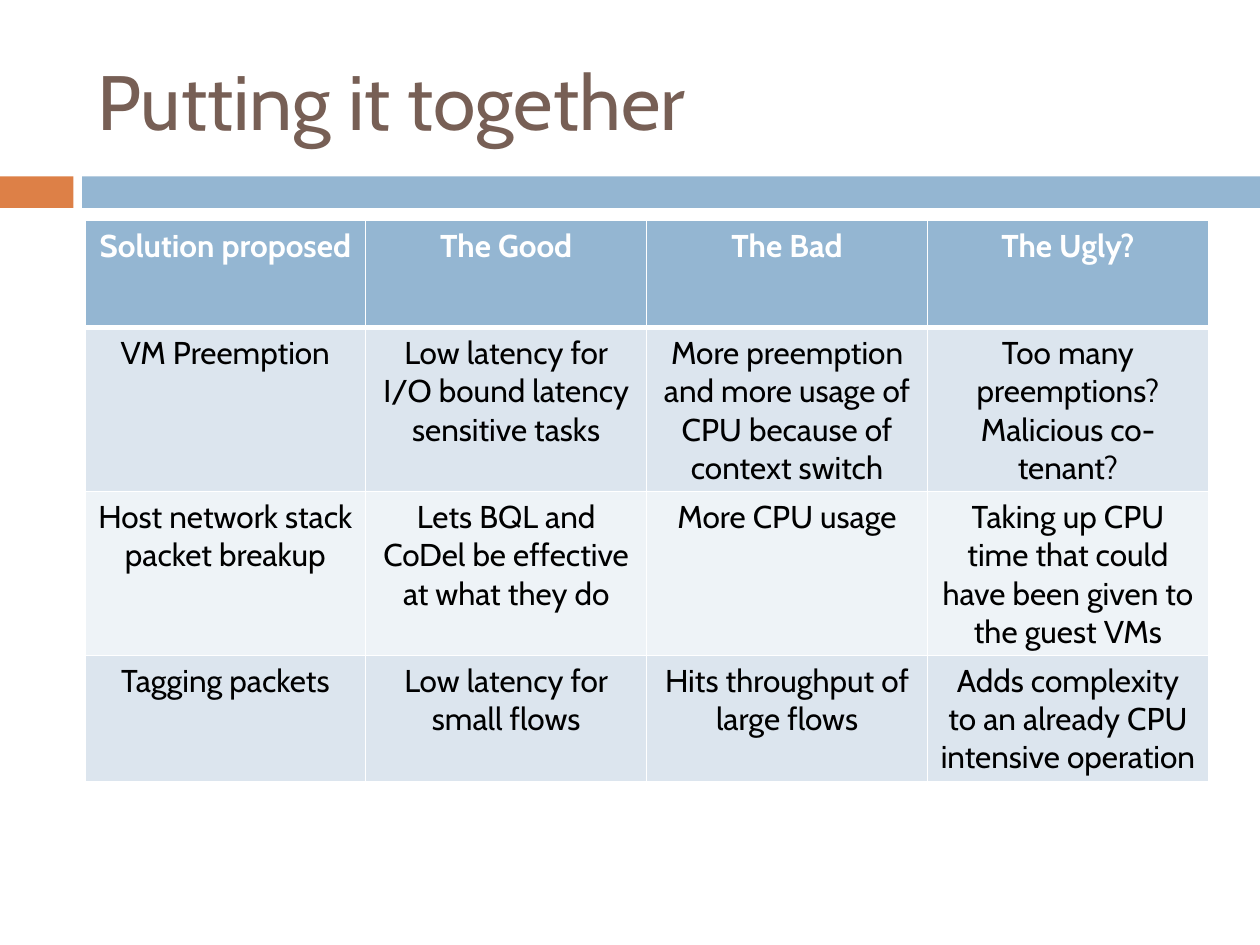
from lxml.etree import SubElement
from pptx import Presentation
from pptx.dml.color import RGBColor
from pptx.enum.shapes import MSO_SHAPE
from pptx.enum.text import MSO_ANCHOR, PP_ALIGN
from pptx.oxml.ns import qn
from pptx.util import Pt

HUES = {"rust": "DD8047", "blue": "94B6D2", "brown": "775F55", "white": "FFFFFF",
        "black": "000000", "pale": "DCE5EE", "light": "EEF3F7"}
ROWS = [
    ["Solution proposed", "The Good", "The Bad", "The Ugly?"],
    ["VM Preemption", "Low latency for I/O bound latency sensitive tasks",
     "More preemption and more usage of CPU because of context switch",
     "Too many preemptions? Malicious co-tenant?"],
    ["Host network stack packet breakup",
     "Lets BQL and CoDel be effective at what they do", "More CPU usage",
     "Taking up CPU time that could have been given to the guest VMs"],
    ["Tagging packets", "Low latency for small flows",
     "Hits throughput of large flows",
     "Adds complexity to an already CPU intensive operation"],
]


def color(name):
    """Return the named colour."""
    return RGBColor.from_string(HUES[name])


def write(frame, text, size=18, hue="black", bold=False, align=PP_ALIGN.LEFT):
    """Put formatted text in a text frame."""
    frame.word_wrap = True
    para = frame.paragraphs[0]
    para.alignment = align
    run = para.add_run()
    run.text = text
    font = run.font
    font.name, font.size, font.bold = "Cabin", Pt(size), bold
    font.color.rgb = color(hue)


def add_title(slide, text, left, top, width, height):
    """Add the slide title in the given box."""
    box = slide.shapes.add_textbox(Pt(left), Pt(top), Pt(width), Pt(height))
    box.text_frame.vertical_anchor = MSO_ANCHOR.MIDDLE
    write(box.text_frame, text, size=44, hue="brown")


def add_band(slide, left, top, width, height, tab=42, gap=5):
    """Add a short tab and a long bar that fill the given box."""
    bars = [(left, tab, "rust"), (left + tab + gap, width - tab - gap, "blue")]
    for start, span, hue in bars:
        bar = slide.shapes.add_shape(MSO_SHAPE.RECTANGLE, Pt(start), Pt(top),
                                     Pt(span), Pt(height))
        bar.shadow.inherit = False
        bar.fill.solid()
        bar.fill.fore_color.rgb = color(hue)
        bar.line.fill.background()


def add_edges(cell, top, base):
    """Draw white borders around a cell."""
    props = cell._tc.get_or_add_tcPr()
    for side, width in zip("LRTB", (1, 1, top, base)):
        line = SubElement(props, qn(f"a:ln{side}"), w=str(Pt(width)))
        fill = SubElement(line, qn("a:solidFill"))
        SubElement(fill, qn("a:srgbClr"), val=HUES["white"])


def add_grid(slide, rows, left, top, width, height):
    """Add the table with a header and banded rows."""
    grid = slide.shapes.add_table(len(rows), len(rows[0]), Pt(left), Pt(top),
                                  Pt(width), Pt(height)).table
    for i, row in enumerate(rows):
        head = i == 0
        shade = "blue" if head else "pale" if i % 2 else "light"
        for j, text in enumerate(row):
            cell = grid.cell(i, j)
            add_edges(cell, top=3 if i == 1 else 1, base=3 if head else 1)
            cell.fill.solid()
            cell.fill.fore_color.rgb = color(shade)
            write(cell.text_frame, text, hue="white" if head else "black",
                  bold=head, align=PP_ALIGN.CENTER)


def main():
    """Build and save the slide."""
    deck = Presentation()
    deck.slide_width, deck.slide_height = Pt(720), Pt(540)
    slide = deck.slides.add_slide(deck.slide_layouts[6])
    add_band(slide, 0, 100.8, 720, 18)
    add_title(slide, "Putting it together", 48.5, 18, 642, 78)
    add_grid(slide, ROWS, 48.5, 126, 642, 244.8)
    deck.save("out.pptx")


if __name__ == "__main__":
    main()
